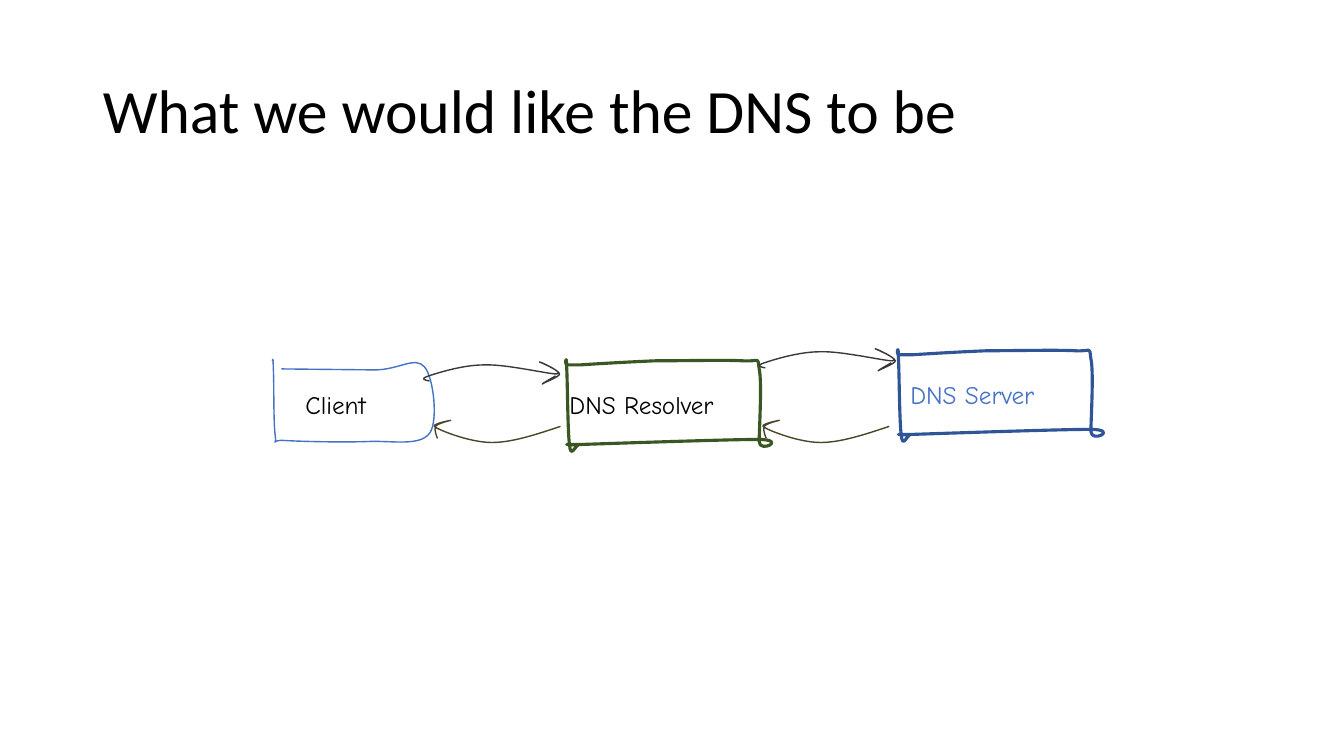
import lxml.etree
import pptx
import pptx.dml.color
import pptx.enum.text
import pptx.oxml.ns
import pptx.util

UNIT = pptx.util.Inches(0.01)

CLIENT = (161, 82), [
    (9, 10), (102, 11), (125, 11, 142, -3, 151, 8),
    (160, 18, 165, 62, 156, 74), (146, 87, 119, 81, 95, 82),
    (71, 83, 28, 82, 12, 81), (-3, 80, 5, 88, 3, 76),
    (1, 63, 2, 20, 1, 8), (1, -4, 0, 2, 0, 2),
]
SERVER = (204, 91), [
    (15, 6), (30, 5, 63, 3, 89, 2), (116, 2, 159, 1, 176, 2),
    (194, 3, 190, -3, 192, 10), (195, 23, 192, 71, 192, 82),
    (192, 94, 221, 80, 191, 80), (162, 80, 45, 84, 15, 85),
    (-15, 85, 13, 85, 12, 86), (10, 86, 5, 99, 4, 86),
    (2, 73, 2, 20, 1, 7), (1, -7, -1, 6, 1, 6), (4, 6, 0, 6, 15, 6),
]
REQUEST = (135, 21), [
    (6, 19), (1, 18, -4, 17, 5, 14), (14, 11, 39, 3, 60, 3),
    (81, 2, 123, 12, 132, 12), (141, 11, 115, 0, 115, 0),
    (116, 0, 134, 8, 135, 12), (135, 15, 118, 21, 118, 22),
    (117, 22, 124, 18, 131, 14),
]
REPLY = (126, 21), [
    (125, 6), (101, 14, 77, 22, 57, 22), (36, 22, 8, 11, 1, 7),
    (-6, 4, 16, 0, 16, 0), (16, 0, 3, 3, 1, 6), (-1, 9, 3, 18, 3, 18),
    (3, 18),
]


def color(value):
    return pptx.dml.color.RGBColor.from_string(value)


def add_span(para, text, font, size, tint):
    span = para.add_run()
    span.text = text
    span.font.name = font
    span.font.size = pptx.util.Pt(size)
    span.font.color.rgb = color(tint)


def add_element(parent, tag, **attributes):
    return lxml.etree.SubElement(parent, pptx.oxml.ns.qn(tag), **attributes)


def draw_strokes(outline, strokes, close):
    for child in list(outline):
        outline.remove(child)
    for index, stroke in enumerate(strokes):
        tag = "a:cubicBezTo" if len(stroke) == 6 else "a:lnTo" if index else "a:moveTo"
        segment = add_element(outline, tag)
        for x, y in zip(stroke[::2], stroke[1::2]):
            add_element(segment, "a:pt", x=str(x), y=str(y))
    if close:
        add_element(outline, "a:close")


def add_sketch(page, left, top, figure, tint, width, close=False):
    size, strokes = figure
    builder = page.shapes.build_freeform(0, 0, scale=UNIT)
    builder.add_line_segments([size], close=False)
    sketch = builder.convert_to_shape(pptx.util.Inches(left), pptx.util.Inches(top))
    draw_strokes(next(sketch.element.iter(pptx.oxml.ns.qn("a:path"))), strokes, close)
    sketch.shadow.inherit = False
    sketch.fill.background()
    sketch.line.color.rgb = color(tint)
    sketch.line.width = pptx.util.Pt(width)


def add_label(page, left, top, width, text, tint):
    box = page.shapes.add_textbox(*map(pptx.util.Inches, (left, top, width, 0.4)))
    box.text_frame.word_wrap = False
    box.text_frame.auto_size = pptx.enum.text.MSO_AUTO_SIZE.SHAPE_TO_FIT_TEXT
    add_span(box.text_frame.paragraphs[0], text, "Comic Neue", 18, tint)


def add_node(page, left, top, figure, line, label, close=False):
    add_sketch(page, left, top, figure, *line, close)
    shift, width, text, tint = label
    add_label(page, left + shift, top + 0.25, width, text, tint)


def add_exchange(page, request, reply):
    add_sketch(page, *request, REQUEST, "3B3838", 1)
    add_sketch(page, *reply, REPLY, "4A452A", 1)


def add_title(page, left, top, width, height, text):
    title = page.shapes.title
    title.left, title.top, title.width, title.height = map(
        pptx.util.Inches, (left, top, width, height)
    )
    frame = title.text_frame
    frame.word_wrap = True
    frame.auto_size = pptx.enum.text.MSO_AUTO_SIZE.NONE
    frame.vertical_anchor = pptx.enum.text.MSO_ANCHOR.MIDDLE
    para = frame.paragraphs[0]
    para.alignment = pptx.enum.text.PP_ALIGN.LEFT
    para.line_spacing = 0.9
    add_span(para, text, "Calibri", 44, "000000")


def add_diagram(page, left, top):
    add_node(page, left, top, CLIENT, ("4472C4", 1), (0.23, 1.02, "Client", "000000"))
    add_node(page, left + 2.91, top, SERVER, ("385723", 2.25),
             (-0.06, 2.07, "DNS Resolver", "000000"), True)
    add_exchange(page, (left + 1.5, top + 0.03), (left + 1.61, top + 0.61))
    add_exchange(page, (left + 4.83, top - 0.1), (left + 4.87, top + 0.61))
    add_node(page, left + 6.2, top - 0.1, SERVER, ("2F5597", 2.25),
             (0.03, 1.84, "DNS Server", "4472C4"), True)


def main():
    deck = pptx.Presentation()
    deck.slide_width = pptx.util.Inches(13.33)
    deck.slide_height = pptx.util.Inches(7.5)
    page = deck.slides.add_slide(deck.slide_layouts.get_by_name("Title Only"))
    add_title(page, 0.92, 0.4, 11.5, 1.45, "What we would like the DNS to be")
    add_diagram(page, 2.7, 3.56)
    deck.save("out.pptx")


if __name__ == "__main__":
    main()
